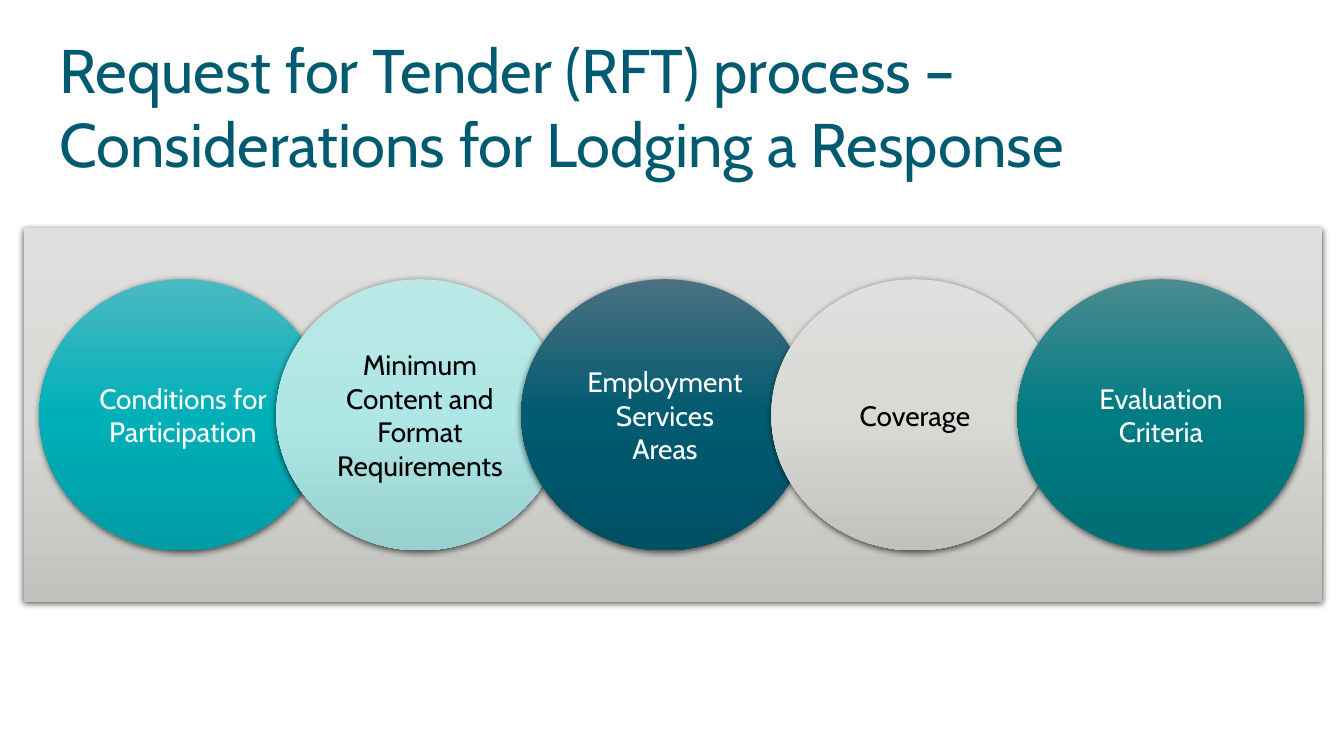
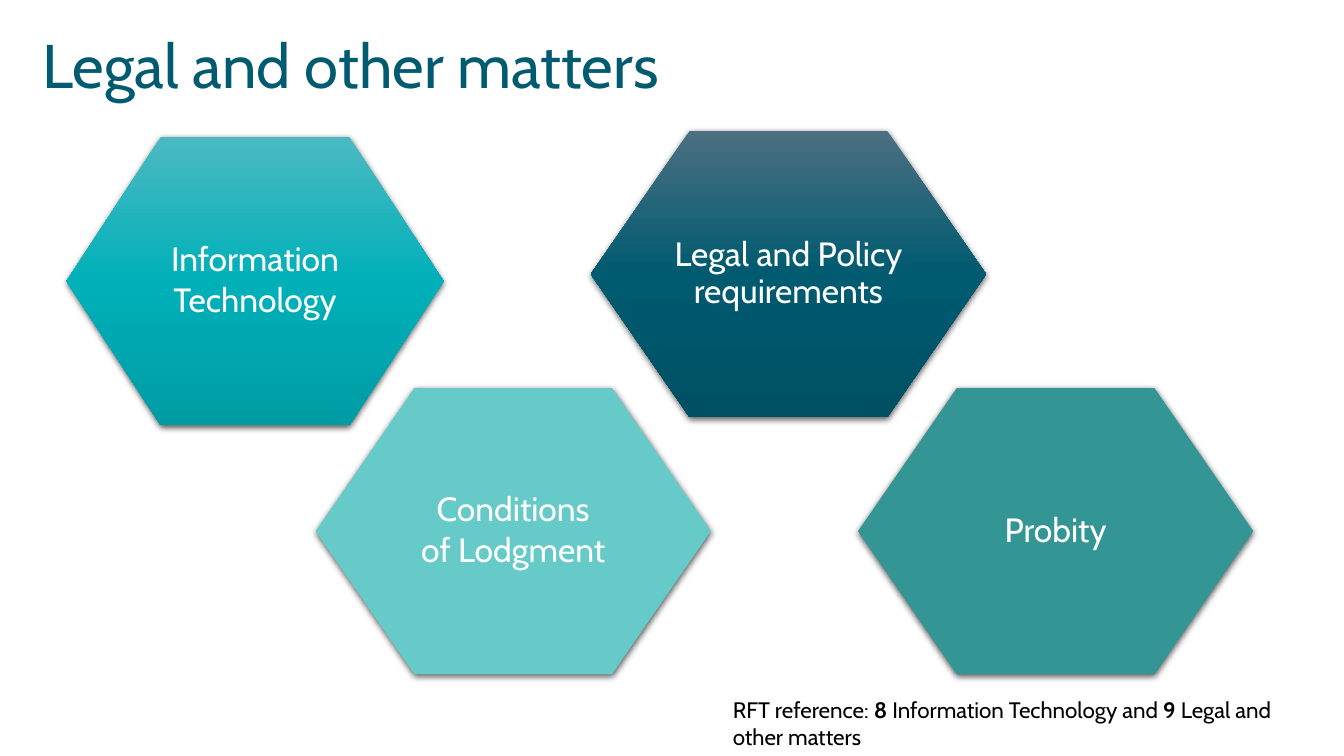
"""Build two slides on lodging a tender response."""
from copy import deepcopy

from lxml.etree import SubElement
from pptx import Presentation
from pptx.dml.color import RGBColor
from pptx.enum.shapes import MSO_SHAPE
from pptx.enum.text import MSO_ANCHOR, MSO_AUTO_SIZE, PP_ALIGN
from pptx.oxml.ns import qn
from pptx.util import Inches, Pt

FACE = "Cabin"
NAVY, WHITE, BLACK = "005A70", "FFFFFF", "000000"
TEAL = ("4BB9C2", "00B0B9", "009CA4")
MINT = ("BCE8E7", "AEE7E5", "97D0CF")
DEEP = ("4B7081", NAVY, "005064")
GREY = ("DFDFDD", "D9D9D6", "C1C1BE")
PINE = ("4B8B90", "007C82", "006E74")

STEPS = [
    (0.39, TEAL, WHITE, ["Conditions for Participation"]),
    (2.74, MINT, BLACK, ["Minimum Content and Format Requirements"]),
    (5.17, DEEP, WHITE, ["Employment Services", "Areas"]),
    (7.65, GREY, BLACK, ["Coverage"]),
    (10.09, PINE, WHITE, ["Evaluation Criteria"]),
]
TOPICS = [
    ((0.66, 1.36, 3.74, 2.86), TEAL, ["Information", "Technology"]),
    ((5.86, 1.3, 3.92, 2.84), DEEP, ["Legal and Policy requirements"]),
    ((3.13, 3.85, 3.92, 2.84), "66CAC8", ["Conditions", "of Lodgment"]),
    ((8.51, 3.85, 3.92, 2.84), "349694", ["Probity"]),
]
NOTE = [("RFT reference: ", False), ("8 ", True),
        ("Information Technology and ", False), ("9 ", True),
        ("Legal and other matters", False)]

INSETS = {"margin_left": Inches(0.04), "margin_right": Inches(0.04),
          "margin_top": Inches(0.05), "margin_bottom": Inches(0.05)}
LABEL = {"word_wrap": True, "vertical_anchor": MSO_ANCHOR.MIDDLE, **INSETS}
HEAD = {"word_wrap": True, "auto_size": MSO_AUTO_SIZE.NONE,
        "vertical_anchor": MSO_ANCHOR.BOTTOM, **dict.fromkeys(INSETS, 0)}
CENTER = {"alignment": PP_ALIGN.CENTER}
TIGHT = {**CENTER, "line_spacing": 0.9, "space_after": Pt(3)}


def tint(code):
    """Turn a hex string into a colour."""
    return RGBColor.from_string(code)


def apply(item, looks):
    """Set each attribute named in a dict."""
    for name, value in looks.items():
        setattr(item, name, value)


def ink(font, size, color, bold=False):
    """Style a font."""
    apply(font, {"name": FACE, "size": Pt(size), "bold": bold})
    font.color.rgb = tint(color)


def paint(shape, fill):
    """Fill with one colour or a three-stop downward gradient."""
    if isinstance(fill, str):
        shape.fill.solid()
        shape.fill.fore_color.rgb = tint(fill)
        return
    shape.fill.gradient()
    shape.fill.gradient_angle = 270
    stops = next(shape._element.spPr.iter(qn("a:gsLst")))
    stops.insert(1, deepcopy(stops[0]))
    for stop, place, color in zip(shape.fill.gradient_stops, (0, 0.5, 1), fill):
        stop.position = place
        stop.color.rgb = tint(color)


def shade(shape):
    """Give a shape a soft shadow below it."""
    shape.shadow.inherit = False
    effects = shape._element.spPr.find(qn("a:effectLst"))
    outer = SubElement(effects, qn("a:outerShdw"), blurRad=str(Pt(4.5)),
                       dist=str(Pt(1.5)), dir="5400000", rotWithShape="0")
    color = SubElement(outer, qn("a:srgbClr"), val=BLACK)
    SubElement(color, qn("a:alpha"), val="63000")


def panel(slide, kind, box, fill):
    """Add a filled, shadowed shape without an outline."""
    shape = slide.shapes.add_shape(kind, *map(Inches, box))
    paint(shape, fill)
    shape.line.fill.background()
    shade(shape)
    return shape


def label(shape, lines, size, color, looks):
    """Write centred lines in a shape."""
    frame = shape.text_frame
    apply(frame, LABEL)
    frame.text = "\n".join(lines)
    for para in frame.paragraphs:
        apply(para, looks)
        ink(para.font, size, color)


def page(deck, text, box):
    """Add a slide with its title."""
    slide = deck.slides.add_slide(deck.slide_layouts[5])
    title = slide.shapes.title
    apply(title, dict(zip(("left", "top", "width", "height"), map(Inches, box))))
    frame = title.text_frame
    apply(frame, HEAD)
    frame.text = text
    para = frame.paragraphs[0]
    para.alignment = PP_ALIGN.LEFT
    ink(para.font, 44, NAVY)
    return slide


def process(deck):
    """Draw the chain of considerations."""
    slide = page(deck, "Request for Tender (RFT) process – "
                 "Considerations for Lodging a Response", (0.59, 0.3, 11.49, 1.48))
    panel(slide, MSO_SHAPE.RECTANGLE, (0.24, 2.26, 12.87, 3.71), GREY)
    for left, fill, color, lines in STEPS:
        disc = panel(slide, MSO_SHAPE.OVAL, (left, 2.77, 2.85, 2.69), fill)
        label(disc, lines, 20, color, CENTER)


def matters(deck):
    """Draw the hexagons and the reference line."""
    slide = page(deck, "Legal and other matters", (0.42, 0.26, 11.49, 0.74))
    for box, fill, lines in TOPICS:
        cell = panel(slide, MSO_SHAPE.HEXAGON, box, fill)
        cell.adjustments[0] = box[2] / 4 / box[3]
        label(cell, lines, 24, WHITE, TIGHT)
    note = slide.shapes.add_textbox(*map(Inches, (7.17, 6.86, 5.77, 0.64)))
    note.text_frame.word_wrap = True
    para = note.text_frame.paragraphs[0]
    for text, bold in NOTE:
        run = para.add_run()
        run.text = text
        ink(run.font, 16, BLACK, bold)


def main():
    """Build and save the deck."""
    deck = Presentation()
    apply(deck, {"slide_width": Inches(13.33), "slide_height": Inches(7.5)})
    process(deck)
    matters(deck)
    deck.save("out.pptx")


if __name__ == "__main__":
    main()
